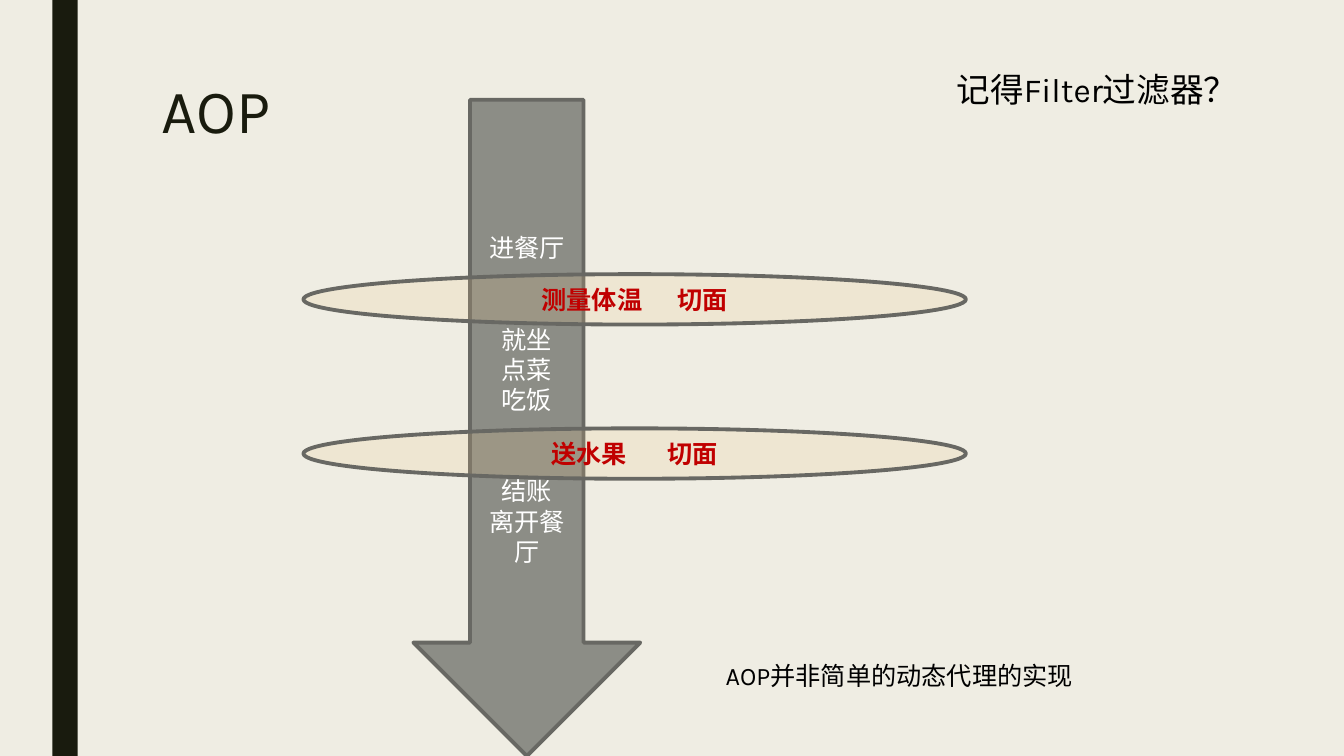
import pptx
import pptx.util
import pptx.dml.color
import pptx.enum.shapes
import pptx.enum.text
import pptx.oxml
import pptx.oxml.ns
from pptx.util import Inches, Pt

RGBColor = pptx.dml.color.RGBColor
MSO_SHAPE = pptx.enum.shapes.MSO_SHAPE
ANCHOR = pptx.enum.text.MSO_ANCHOR
ALIGN = pptx.enum.text.PP_ALIGN
AUTO_SIZE = pptx.enum.text.MSO_AUTO_SIZE

CREAM = RGBColor(0xEF, 0xED, 0xE3)
INK = RGBColor(0x19, 0x1B, 0x0E)
BLACK = RGBColor(0, 0, 0)
WHITE = RGBColor(0xFF, 0xFF, 0xFF)
GREY = RGBColor(0x8C, 0x8D, 0x86)
OUTLINE = RGBColor(0x68, 0x68, 0x63)
SAND = RGBColor(0xEB, 0xC4, 0x83)
RED = RGBColor(0xC0, 0, 0)


def apply(target, **values):
    for name, value in values.items():
        setattr(target, name, value)


class SlideBuilder:
    font_name = "Karla"
    line_width = Pt(2.75)

    def __init__(self, deck):
        self.slide = deck.slides.add_slide(deck.slide_layouts[5])
        background = self.slide.background.fill
        background.solid()
        background.fore_color.rgb = CREAM

    def add_run(self, paragraph, words, size, color, bold=False):
        run = paragraph.add_run()
        run.text = words
        apply(run.font, name=self.font_name, size=Pt(size), bold=bold)
        run.font.color.rgb = color
        return run

    def title(self, box, words):
        heading = self.slide.shapes.title
        left, top, width, height = map(Inches, box)
        apply(heading, left=left, top=top, width=width, height=height)
        apply(heading.text_frame, vertical_anchor=ANCHOR.TOP, word_wrap=True,
              auto_size=AUTO_SIZE.NONE)
        paragraph = heading.text_frame.paragraphs[0]
        apply(paragraph, alignment=ALIGN.LEFT, line_spacing=0.89)
        self.add_run(paragraph, words, 44, INK)

    def note(self, box, words, size, **frame_format):
        frame = self.slide.shapes.add_textbox(*map(Inches, box)).text_frame
        apply(frame, word_wrap=True, **frame_format)
        self.add_run(frame.paragraphs[0], words, size, BLACK)

    def shape(self, kind, box, fill, outline=None, opacity=None):
        shape = self.slide.shapes.add_shape(kind, *map(Inches, box))
        shape.shadow.inherit = False
        shape.fill.solid()
        shape.fill.fore_color.rgb = fill
        if opacity is not None:
            color = shape.fill._xPr.find(".//" + pptx.oxml.ns.qn("a:srgbClr"))
            color.append(pptx.oxml.parse_xml(
                f'<a:alpha {pptx.oxml.ns.nsdecls("a")} val="{opacity * 1000}"/>'))
        if outline is None:
            shape.line.fill.background()
        else:
            shape.line.color.rgb = outline
            shape.line.width = self.line_width
        apply(shape.text_frame, vertical_anchor=ANCHOR.MIDDLE, word_wrap=True)
        return shape

    def flow_arrow(self, box, stages, stage_gap):
        """Down arrow with groups of steps, set apart where an aspect cuts in."""
        frame = self.shape(MSO_SHAPE.DOWN_ARROW, box, GREY, OUTLINE).text_frame
        paragraph = frame.paragraphs[0]
        for stage_number, steps in enumerate(stages):
            for step_number, step in enumerate(steps):
                if stage_number or step_number:
                    paragraph = frame.add_paragraph()
                if stage_number and not step_number:
                    paragraph.space_before = Pt(stage_gap)
                paragraph.alignment = ALIGN.CENTER
                self.add_run(paragraph, step, 18, WHITE)

    def aspect(self, box, action, label, gap):
        """Translucent ellipse; gap is the extra points between its two words."""
        ellipse = self.shape(MSO_SHAPE.OVAL, box, SAND, OUTLINE, opacity=17)
        paragraph = ellipse.text_frame.paragraphs[0]
        paragraph.alignment = ALIGN.CENTER
        self.add_run(paragraph, action, 18, RED, bold=True)
        spacer = self.add_run(paragraph, " ", 18, RED, bold=True)
        spacer.font._element.set("spc", str(gap * 100))
        self.add_run(paragraph, label, 18, RED, bold=True)


def main():
    deck = pptx.Presentation()
    apply(deck, slide_width=Inches(13.33), slide_height=Inches(7.5))
    page = SlideBuilder(deck)

    page.shape(MSO_SHAPE.RECTANGLE, (0.52, 0, 0.25, 7.5), INK)
    page.title((1.5, 0.75, 10.5, 1.62), "AOP")
    page.note((9.39, 0.09, 3.94, 1.59), "记得Filter过滤器？", 24,
              vertical_anchor=ANCHOR.MIDDLE)
    stages = [["进餐厅"], ["就坐", "点菜", "吃饭"], ["结账", "离开餐厅"]]
    page.flow_arrow((4.1, 0.99, 2.25, 6.51), stages, stage_gap=43.5)
    aspects = [(2.72, "测量体温", 21), (4.25, "送水果", 25)]
    for top, action, gap in aspects:
        page.aspect((3.01, top, 6.57, 0.5), action, "切面", gap)
    page.note((7.1, 6.5, 3.67, 0.4), "AOP并非简单的动态代理的实现", 18,
              auto_size=AUTO_SIZE.SHAPE_TO_FIT_TEXT)

    deck.save("out.pptx")


if __name__ == "__main__":
    main()
